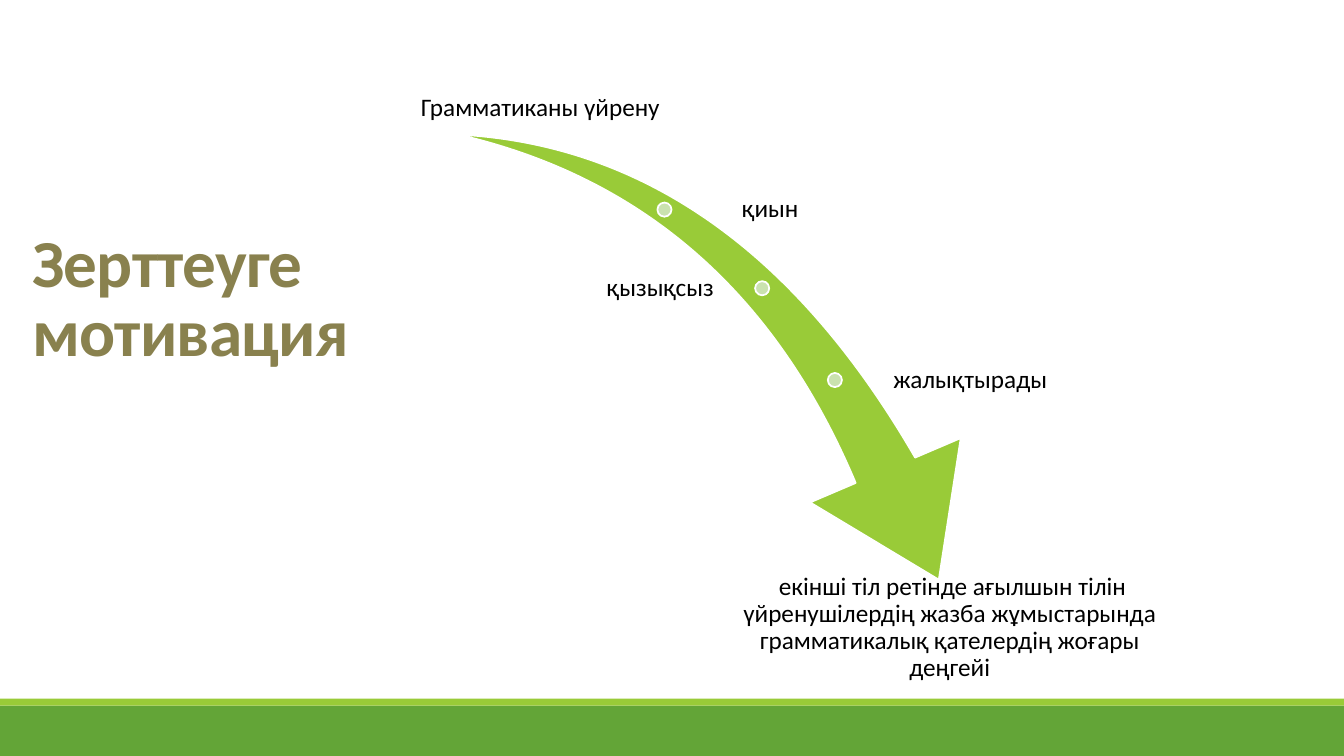
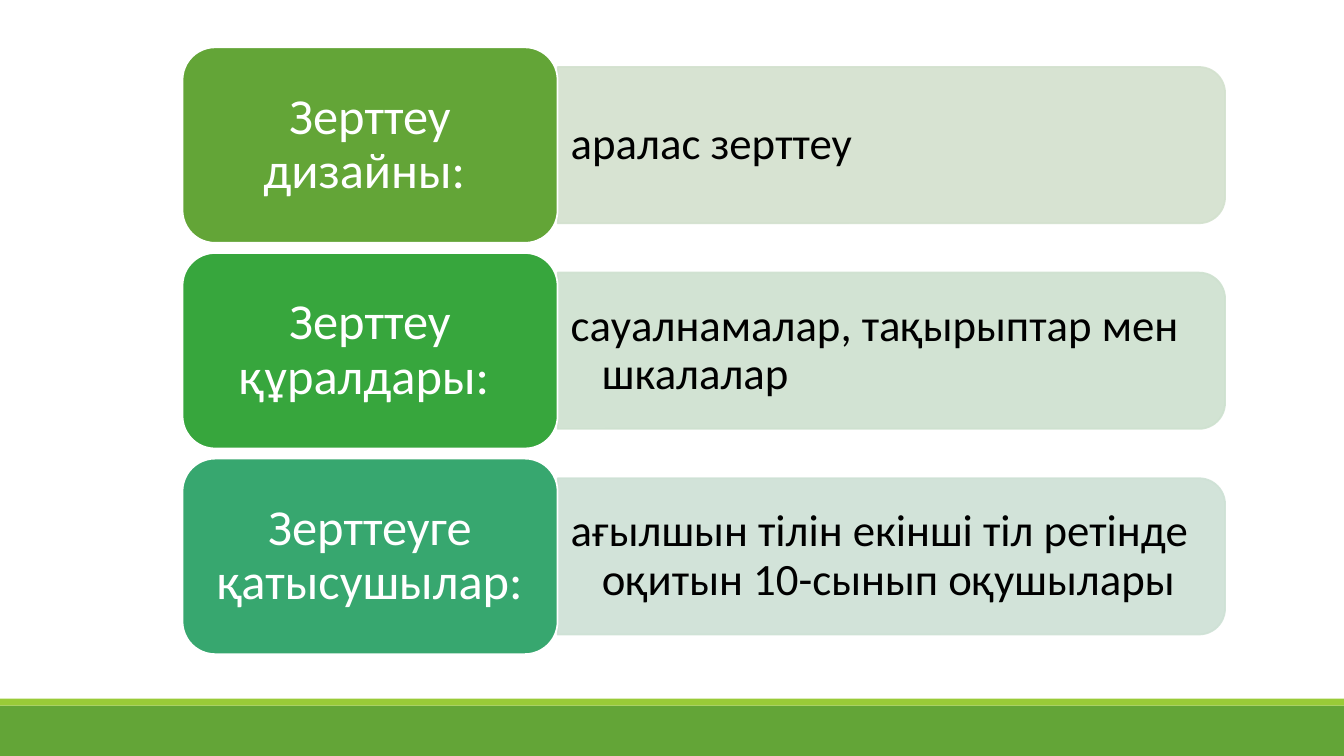
from pptx import Presentation
from pptx import util as u
from pptx.dml.color import RGBColor
from pptx.enum import shapes, text
from pptx.oxml.ns import qn
from lxml import etree

W, H = u.Inches(13.33), u.Inches(7.5)
FONT = "Calibri"
GREEN, LIME, DOT, OLIVE = "63A537", "99CB38", "CAE2AF", "89814E"
WHITE, BLACK = "FFFFFF", "000000"
KIND = shapes.MSO_SHAPE
LEFT, CENTER, RIGHT = text.PP_ALIGN.LEFT, text.PP_ALIGN.CENTER, text.PP_ALIGN.RIGHT
TOP, MIDDLE, BOTTOM = text.MSO_ANCHOR.TOP, text.MSO_ANCHOR.MIDDLE, text.MSO_ANCHOR.BOTTOM


def rgb(color):
    return RGBColor.from_string(color)


def place(x, y, w, h):
    """Turn percentages of the slide's width and height into lengths."""
    return [int(W * x / 100), int(H * y / 100), int(W * w / 100), int(H * h / 100)]


def set_alpha(fill_parent, percent):
    color = fill_parent.find(qn("a:solidFill"))[0]
    etree.SubElement(color, qn("a:alpha")).set("val", str(percent * 1000))


def add_shape(s, kind, box, fill, line=None, alpha=None):
    sp = s.shapes.add_shape(kind, *box)
    sp.shadow.inherit = False
    sp.fill.solid()
    sp.fill.fore_color.rgb = rgb(fill)
    if line is None:
        sp.line.fill.background()
    else:
        sp.line.color.rgb = rgb(line)
        sp.line.width = u.Pt(1.25)
    if alpha is not None:
        props = sp.fill._xPr
        set_alpha(props, alpha)
        set_alpha(props.find(qn("a:ln")), alpha)
    return sp


def write(sp, words, size, color, align=LEFT, anchor=MIDDLE, inset=(0.03, 0.03),
          spacing=0.9, bold=False, hanging=0, tracking=0):
    tf = sp.text_frame
    tf.word_wrap = True
    tf.vertical_anchor = anchor
    tf.margin_left = tf.margin_right = u.Inches(inset[0])
    tf.margin_top = tf.margin_bottom = u.Inches(inset[1])
    p = tf.paragraphs[0]
    p.alignment = align
    p.line_spacing = spacing
    if hanging:
        indent = u.Inches(hanging)
        p._p.get_or_add_pPr().set("marL", str(indent))
        p._p.get_or_add_pPr().set("indent", str(-indent))
    r = p.add_run()
    r.text = words
    r.font.name, r.font.size, r.font.bold = FONT, u.Pt(size), bold
    r.font.color.rgb = rgb(color)
    if tracking:
        r._r.get_or_add_rPr().set("spc", str(int(tracking * 100)))


def add_text(s, box, words, size, color, **style):
    write(s.shapes.add_textbox(*box), words, size, color, **style)


def add_slide(prs):
    s = prs.slides.add_slide(prs.slide_layouts[6])
    # Footer bands
    add_shape(s, KIND.RECTANGLE, place(0, 93.33, 100, 6.67), GREEN)
    add_shape(s, KIND.RECTANGLE, place(0, 92.4, 100, 0.93), LIME)
    return s


def add_label(s, x, y, w, words, **style):
    add_text(s, place(x, y, w, 13.87), words, 18, BLACK, **style)


def add_step(s, dot_x, y, x, w, words, align):
    """A dot on the arrow, with its label centred on the same height."""
    size = u.Inches(0.14)
    cx, cy = place(dot_x, y, 0, 0)[:2]
    add_shape(s, KIND.OVAL, (cx - size // 2, cy - size // 2, size, size), DOT, WHITE)
    add_label(s, x, y - 13.87 / 2, w, words, align=align)


def add_row(s, middle, head, body, card_fill, bar_fill):
    card_x, card_w, bar_w = 13.58, 27.91, 49.66
    right = card_x + card_w

    def centred(x, w, h):
        return place(x, middle - h / 2, w, h)

    # Bar, turned so that its rounded corners face right
    x, y, w, h = centred(right, bar_w, 20.67)
    turned = (x + (w - h) // 2, y + (h - w) // 2, h, w)
    bar = add_shape(s, KIND.ROUND_2_SAME_RECTANGLE, turned, bar_fill, bar_fill, 90)
    bar.rotation = 90
    add_text(s, centred(right, 49.06, 18.67), body, 32, BLACK,
             inset=(0.13, 0.07), hanging=0.31)
    # Heading card
    card = add_shape(s, KIND.ROUNDED_RECTANGLE, centred(card_x, card_w, 25.87),
                     card_fill, WHITE)
    write(card, head, 36, WHITE, align=CENTER, inset=(0.25, 0.17))


def motivation_slide(prs):
    s = add_slide(prs)
    add_text(s, place(1.65, 30.13, 30.31, 39.6), "Зерттеуге мотивация", 48, OLIVE,
             anchor=TOP, inset=(0.1, 0.05), spacing=0.85, bold=True, tracking=-0.5)
    # Falling arrow
    arrow = add_shape(s, KIND.SWOOSH_ARROW, place(33.16, 20, 42.01, 52.13), LIME, WHITE)
    arrow.rotation = 73.3
    arrow.adjustments[0], arrow.adjustments[1] = 0.163, 0.314
    # Labels from start to end
    add_label(s, 30.31, 2.67, 19.8, "Грамматиканы үйрену", align=CENTER, anchor=BOTTOM)
    for step in (
        (49.44, 27.73, 54.99, 28.96, "қиын", LEFT),
        (56.71, 38.13, 30.31, 23.03, "қызықсыз", RIGHT),
        (62.12, 50.27, 66.24, 17.7, "жалықтырады", LEFT),
    ):
        add_step(s, *step)
    add_label(s, 53.11, 75.47, 35.11,
              " екінші тіл ретінде ағылшын тілін үйренушілердің жазба жұмыстарында "
              "грамматикалық қателердің жоғары деңгейі", align=CENTER, anchor=TOP)


def design_slide(prs):
    s = add_slide(prs)
    rows = (
        ("Зерттеу дизайны: ", "аралас зерттеу", GREEN, "D3E1CE"),
        ("Зерттеу құралдары: ", "сауалнамалар, тақырыптар мен шкалалар",
         "37A63D", "CEE1CF"),
        ("Зерттеуге қатысушылар:",
         "ағылшын тілін екінші тіл ретінде оқитын 10-сынып оқушылары",
         "37A76F", "CEE1D5"),
    )
    for i, row in enumerate(rows):
        add_row(s, 19.2 + 27.2 * i, *row)


def main():
    prs = Presentation()
    prs.slide_width, prs.slide_height = W, H
    motivation_slide(prs)
    design_slide(prs)
    prs.save("out.pptx")


if __name__ == "__main__":
    main()
